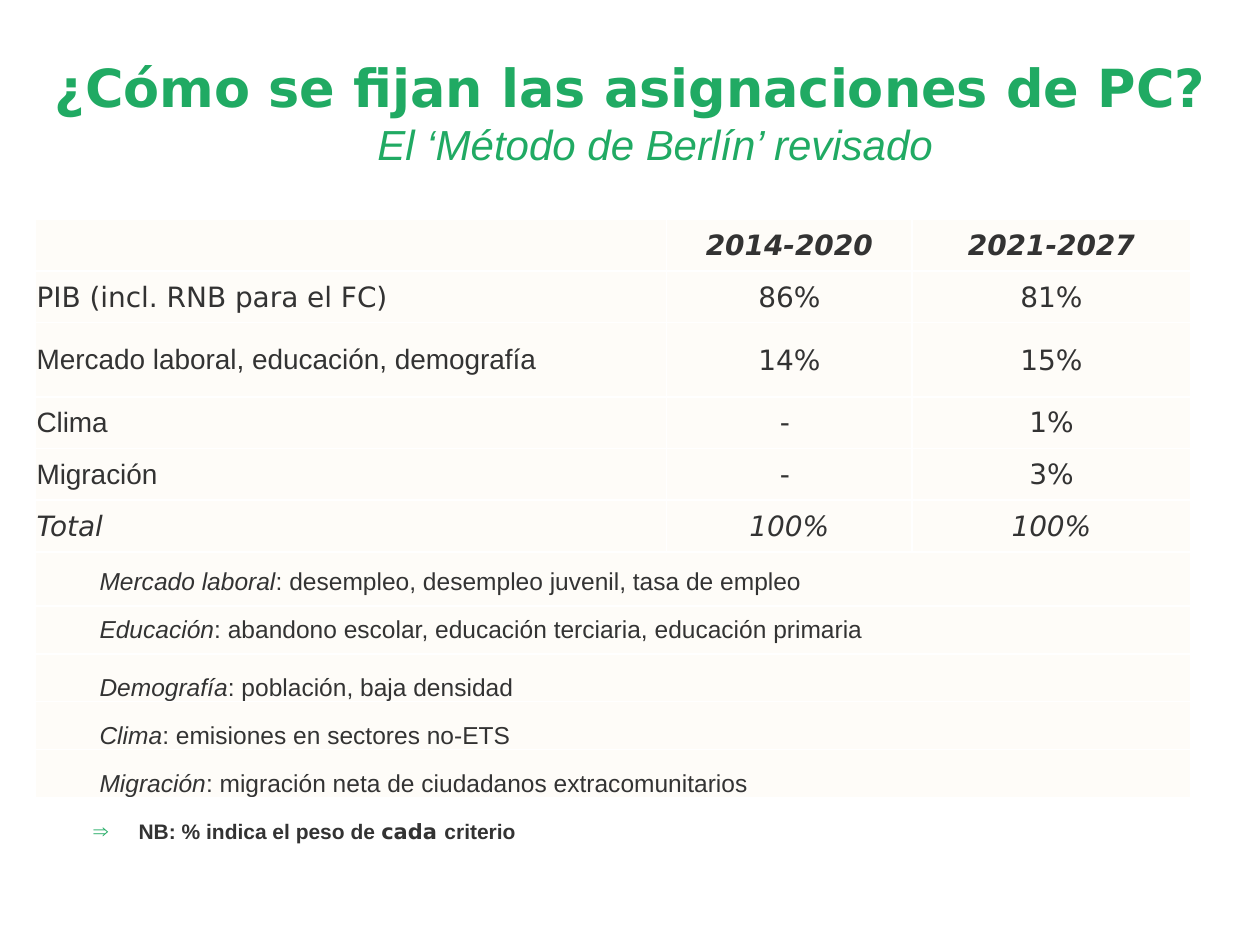
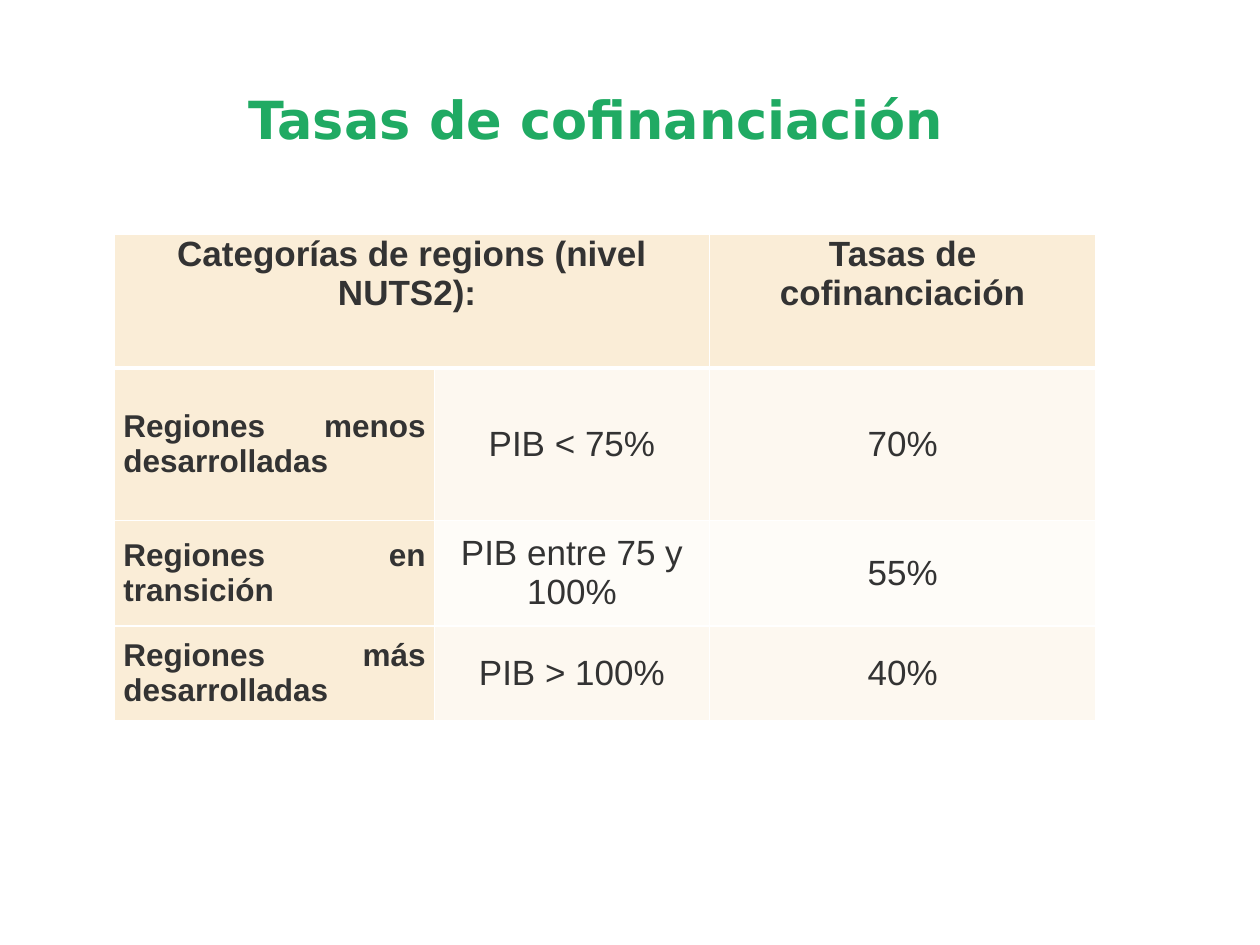
from pptx import Presentation
from pptx.dml.color import RGBColor
from pptx.enum.text import MSO_ANCHOR, MSO_AUTO_SIZE, PP_ALIGN
from pptx.oxml.ns import qn
from pptx.util import Inches, Pt
from lxml.etree import SubElement

GREEN, DARK, WHITE = "20AA63", "333333", "FFFFFF"
SAND, CREAM, IVORY = "FAEDD7", "FDF8F0", "FEFCF8"
SANS, ARIAL = "DejaVu Sans", "Arial"
LEFT, CENTER, JUSTIFY = PP_ALIGN.LEFT, PP_ALIGN.CENTER, PP_ALIGN.JUSTIFY
TOP, MIDDLE, BOTTOM = MSO_ANCHOR.TOP, MSO_ANCHOR.MIDDLE, MSO_ANCHOR.BOTTOM


def rgb(value):
    """Return the colour for a hex string."""
    return RGBColor.from_string(value)


def set_attrs(obj, **values):
    """Set several attributes of an object."""
    for name, value in values.items():
        setattr(obj, name, value)


def add_run(p, text, size, color=DARK, name=ARIAL, bold=False, italic=False):
    """Add a formatted run to a paragraph."""
    r = p.add_run()
    r.text = text
    set_attrs(r.font, size=Pt(size), name=name, bold=bold, italic=italic)
    r.font.color.rgb = rgb(color)


def set_indent(p, left, first):
    """Set the left margin and first-line indent, and return the properties."""
    pPr = p._p.get_or_add_pPr()
    pPr.set("marL", str(Inches(left)))
    pPr.set("indent", str(Inches(first)))
    return pPr


def open_placeholder(sp, box, margin_top):
    """Move a placeholder into a box and return its first paragraph."""
    set_attrs(sp, **dict(zip(("left", "top", "width", "height"), map(Inches, box))))
    tf = sp.text_frame
    set_attrs(tf, word_wrap=True, auto_size=MSO_AUTO_SIZE.NONE,
              vertical_anchor=TOP, margin_top=Inches(margin_top))
    return tf.paragraphs[0]


def add_title(s, box, text, subtitle=None):
    """Fill the title, with an optional italic second line."""
    p = open_placeholder(s.shapes.title, box, 0.08)
    set_indent(p, 0.39, -0.39)
    p.alignment = CENTER
    add_run(p, text, 30, GREEN, SANS, bold=True)
    if subtitle:
        p.add_line_break()
        add_run(p, subtitle, 24, GREEN, italic=True)


def add_note(s, box, parts):
    """Fill the body with one arrow-bulleted bold note of (text, font) parts."""
    p = open_placeholder(s.placeholders[1], box, 0.05)
    pPr = set_indent(p, 0.48, -0.36)
    p.space_before = Pt(0)
    SubElement(SubElement(pPr, qn("a:buClr")), qn("a:srgbClr"), val=GREEN)
    SubElement(pPr, qn("a:buFont"), typeface=ARIAL)
    SubElement(pPr, qn("a:buChar"), char="⇒")
    for text, name in parts:
        add_run(p, text, 12, name=name, bold=True)


def format_cell(cell, fill, margins, bottom_line=1):
    """Give a cell its white borders, margins and fill."""
    tcPr = cell._tc.get_or_add_tcPr()
    for side in "LRTB":
        width = bottom_line if side == "B" else 1
        ln = SubElement(tcPr, qn(f"a:ln{side}"), w=str(Pt(width)))
        SubElement(SubElement(ln, qn("a:solidFill")), qn("a:srgbClr"), val=WHITE)
    cell.fill.solid()
    cell.fill.fore_color.rgb = rgb(fill)
    names = ("margin_left", "margin_top", "margin_right", "margin_bottom")
    set_attrs(cell, **dict(zip(names, map(Inches, margins))))


def write_cell(cell, text, size, align=CENTER, anchor=MIDDLE, **font):
    """Write one run in a cell and return its paragraph."""
    cell.vertical_anchor = anchor
    p = cell.text_frame.paragraphs[0]
    p.alignment = align
    add_run(p, text, size, **font)
    return p


def add_grid(s, left, top, widths, heights):
    """Add an unbanded table with the given column widths and row heights."""
    tbl = s.shapes.add_table(len(heights), len(widths), Inches(left), Inches(top),
                             Inches(sum(widths)), Inches(sum(heights))).table
    set_attrs(tbl, first_row=False, horz_banding=False)
    for col, width in zip(tbl.columns, widths):
        col.width = Inches(width)
    for row, height in zip(tbl.rows, heights):
        row.height = Inches(height)
    return tbl


def add_weights_table(s, left, top):
    """Add the criteria weights, followed by merged rows of definitions."""
    weights = [
        ("", "2014-2020", "2021-2027"),
        ("PIB (incl. RNB para el FC)", "86%", "81%"),
        ("Mercado laboral, educación, demografía", "14%", "15%"),
        ("Clima", "- ", "1%"),
        ("Migración", "- ", "3%"),
        ("Total", "100%", "100%"),
    ]
    definitions = [
        ("Mercado laboral", "desempleo, desempleo juvenil, tasa de empleo"),
        ("Educación", "abandono escolar, educación terciaria, educación primaria"),
        ("Demografía", "población, baja densidad"),
        ("Clima", "emisiones en sectores no-ETS"),
        ("Migración", "migración neta de ciudadanos extracomunitarios"),
    ]
    heights = [0.41, 0.41, 0.59] + [0.41] * 3 + [0.43] + [0.38] * 4
    tbl = add_grid(s, left, top, [5.01, 1.95, 2.21], heights)
    for cell in tbl.iter_cells():
        format_cell(cell, IVORY, (0.01, 0.01, 0.01, 0))
    for i, row in enumerate(weights):
        for j, text in enumerate(row):
            name = ARIAL if j == 0 and i in (2, 3, 4) else SANS
            if text:
                write_cell(tbl.cell(i, j), text, 16, CENTER if j else LEFT, name=name,
                           bold=i == 0, italic=i in (0, len(weights) - 1))
    for i, (term, meaning) in enumerate(definitions):
        row = len(weights) + i
        cell = tbl.cell(row, 0)
        cell.merge(tbl.cell(row, 2))
        p = write_cell(cell, term, 14, LEFT, BOTTOM, italic=True)
        set_indent(p, 0.5, 0)
        add_run(p, f": {meaning}", 14)
        cell.margin_bottom = Inches(0.08 if i < 2 else 0)


def add_rates_table(s, left, top):
    """Add the cofinancing rate of each category of regions."""
    rates = [
        ("Regiones menos desarrolladas", "PIB < 75%", "70%"),
        ("Regiones en transición", "PIB entre 75 y 100%", "55%"),
        ("Regiones más desarrolladas", "PIB > 100%", "40%"),
    ]
    tbl = add_grid(s, left, top, [2.54, 2.18, 3.07], [1.06, 1.21, 0.84, 0.75])
    margins = (0.07, 0, 0.07, 0)
    for j in range(3):
        format_cell(tbl.cell(0, j), SAND, margins, bottom_line=3)
    tbl.cell(0, 0).merge(tbl.cell(0, 1))
    headings = {0: "Categorías de regions (nivel NUTS2): ", 2: "Tasas de cofinanciación"}
    for j, text in headings.items():
        write_cell(tbl.cell(0, j), text, 20, anchor=TOP, bold=True)
    for i, row in enumerate(rates, 1):
        band = CREAM if i % 2 else IVORY
        for j, text in enumerate(row):
            cell = tbl.cell(i, j)
            format_cell(cell, band if j else SAND, margins)
            if j:
                write_cell(cell, text, 20)
            else:
                write_cell(cell, text, 18, JUSTIFY, bold=True)


def build_allocation_slide(prs):
    """Build the slide on how allocations are set."""
    s = prs.slides.add_slide(prs.slide_layouts[1])
    add_title(s, (0.28, 0.36, 9.45, 1.26), "¿Cómo se fijan las asignaciones de PC?",
              "El ‘Método de Berlín’ revisado")
    add_note(s, (0.52, 6.45, 8.66, 0.71),
             [("NB: % indica el peso de ", ARIAL), ("cada ", SANS), ("criterio", ARIAL)])
    add_weights_table(s, 0.28, 1.74)


def build_rates_slide(prs):
    """Build the slide on cofinancing rates."""
    s = prs.slides.add_slide(prs.slide_layouts[5])
    add_title(s, (0.35, 0.61, 8.91, 0.77), "Tasas de cofinanciación ")
    add_rates_table(s, 0.91, 1.86)


def main():
    """Build and save the presentation."""
    prs = Presentation()
    set_attrs(prs, slide_width=Inches(10), slide_height=Inches(7.5))
    build_allocation_slide(prs)
    build_rates_slide(prs)
    prs.save("out.pptx")


if __name__ == "__main__":
    main()
